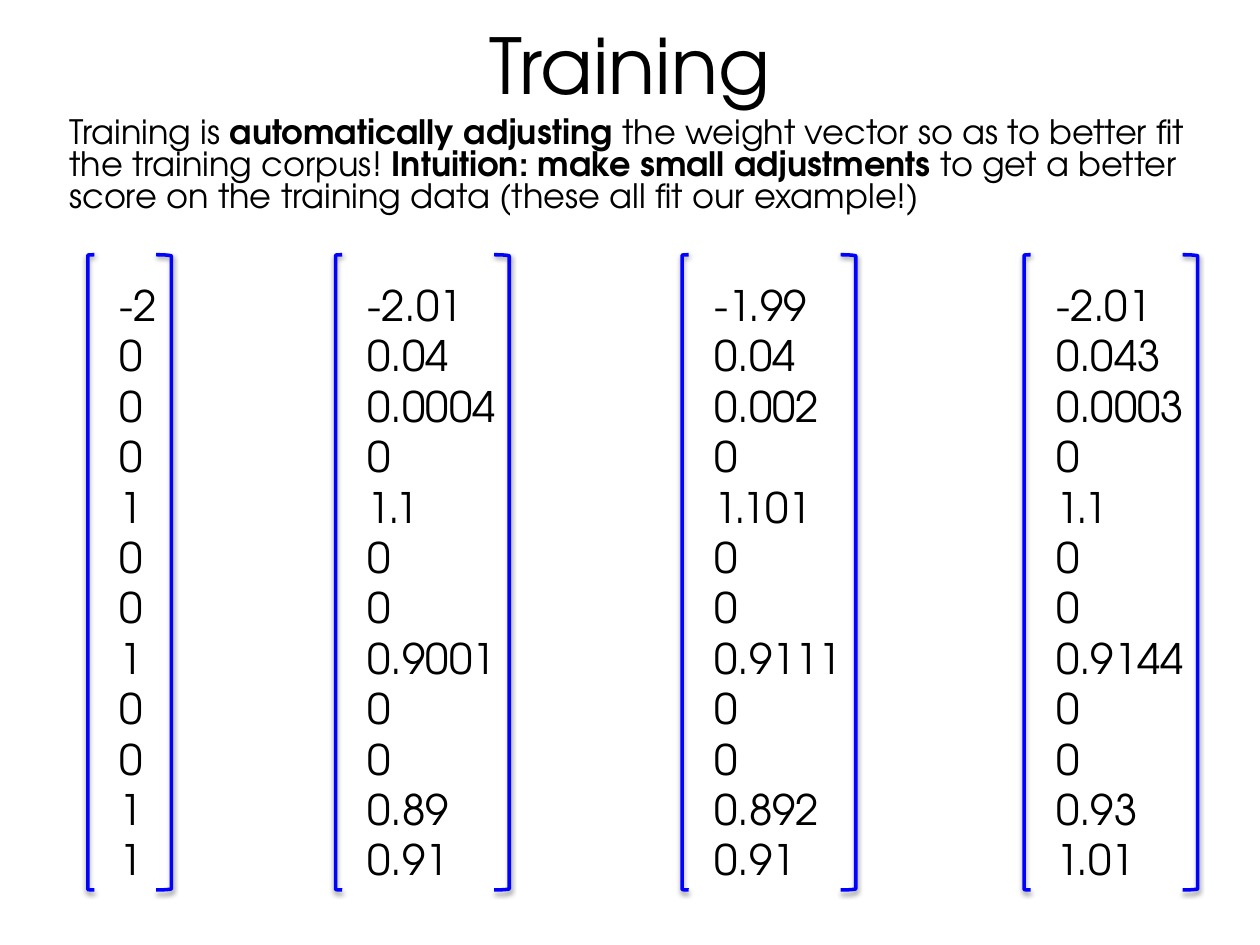
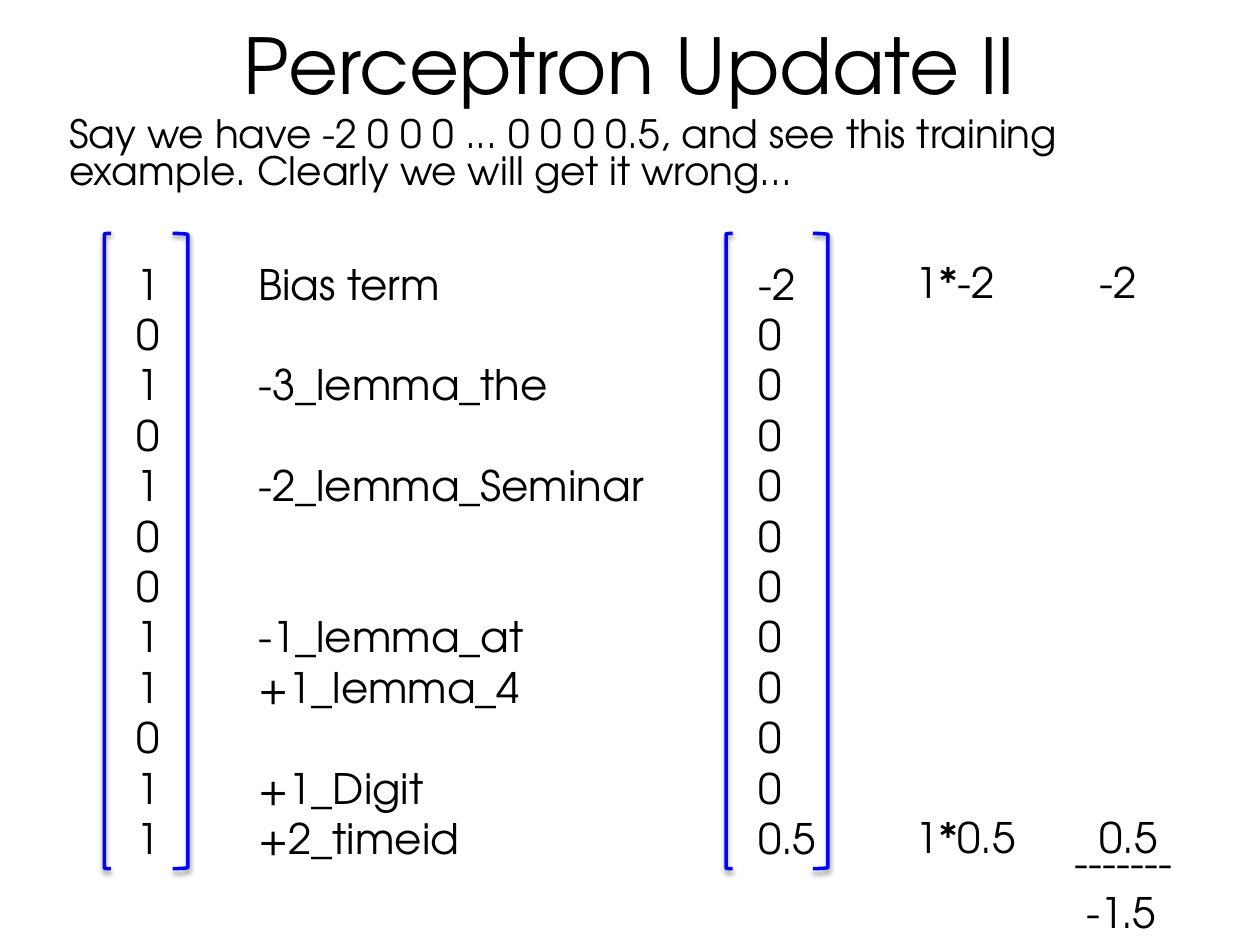
from lxml import etree
from pptx import Presentation
from pptx.dml.color import RGBColor
from pptx.enum.shapes import MSO_SHAPE as Preset
from pptx.enum.text import MSO_ANCHOR as Anchor, MSO_AUTO_SIZE as AutoSize, PP_ALIGN as Align
from pptx.oxml.ns import qn
from pptx.util import Pt

BLACK = RGBColor(0x00, 0x00, 0x00)
BRACKET_BLUE = RGBColor(0x00, 0x01, 0xFF)
FONT = "TeX Gyre Adventor"
INSET = 3.6
ENTRY_SIZE = 24
ROW_PITCH = 28.8
COLUMN_HEIGHT = 355
BRACKET_HEIGHT = 363
LEFT_ARM, RIGHT_ARM = 3.8, 8.64
ENTRY_OFFSET = (14.7, 10.6)


class SlideWriter:
    """Holds the shared style and the slide being filled."""

    def __init__(self, deck):
        self.deck = deck
        self.page = None

    def start(self, heading):
        self.page = self.deck.slides.add_slide(self.deck.slide_layouts[1])
        title = self.page.shapes.title
        self.place(title, 36, 0, 648, 72.7)
        frame = self.frame(title, Anchor.MIDDLE)
        para = frame.paragraphs[0]
        para.alignment = Align.CENTER
        self.span(para, heading, 44)

    def place(self, box, left, top, width, height):
        box.left, box.top, box.width, box.height = map(Pt, (left, top, width, height))

    def frame(self, box, anchor=Anchor.TOP, wrap=True, fit=AutoSize.NONE):
        frame = box.text_frame
        frame.margin_left = frame.margin_right = Pt(INSET)
        frame.margin_top = frame.margin_bottom = Pt(INSET)
        frame.vertical_anchor = anchor
        frame.word_wrap = wrap
        frame.auto_size = fit
        return frame

    def span(self, para, text, size, bold=False):
        span = para.add_run()
        span.text = text
        span.font.name = FONT
        span.font.size = Pt(size)
        span.font.bold = bold
        span.font.color.rgb = BLACK

    def indent(self, para, left):
        props = para._p.get_or_add_pPr()
        props.set("marL", str(Pt(left)))
        props.set("indent", "0")
        return props

    def intro(self, spans, size, height, before):
        """Fill the body placeholder with (text, bold) pairs."""
        body = self.page.placeholders[1]
        self.place(body, 36, 64.1, 648, height)
        para = self.frame(body).paragraphs[0]
        para.line_spacing = 0.8
        para.space_before = Pt(before)
        etree.SubElement(self.indent(para, 0), qn("a:buNone"))
        for text, bold in spans:
            self.span(para, text, size, bold)

    def column(self, left, top, width, entries, wrap=False, indent=0, height=COLUMN_HEIGHT):
        """Write {row: text}; skipped rows become space before the next entry."""
        box = self.page.shapes.add_textbox(Pt(left), Pt(top), Pt(width), Pt(height))
        frame = self.frame(box, wrap=wrap, fit=AutoSize.SHAPE_TO_FIT_TEXT)
        previous = -1
        for row, text in entries.items():
            para = frame.paragraphs[0] if previous < 0 else frame.add_paragraph()
            para.space_before = Pt((row - previous - 1) * ROW_PITCH)
            if indent:
                self.indent(para, indent)
            self.span(para, text, ENTRY_SIZE)
            previous = row

    def bracket(self, preset, left, top, width):
        bracket = self.page.shapes.add_shape(
            preset, Pt(left), Pt(top), Pt(width), Pt(BRACKET_HEIGHT))
        bracket.fill.background()
        bracket.line.color.rgb = BRACKET_BLUE
        bracket.line.width = Pt(2)
        # Soft shadow straight below
        bracket.shadow.inherit = False
        effects = bracket._element.spPr.find(qn("a:effectLst"))
        shadow = etree.SubElement(effects, qn("a:outerShdw"), blurRad=str(Pt(3)),
                                  dist=str(Pt(1.6)), dir="5400000", rotWithShape="0")
        color = etree.SubElement(shadow, qn("a:srgbClr"), val=str(BLACK))
        etree.SubElement(color, qn("a:alpha"), val="38000")

    def vector(self, left, top, width, entry_width, values):
        self.bracket(Preset.LEFT_BRACKET, left, top, LEFT_ARM)
        self.bracket(Preset.RIGHT_BRACKET, left + width - RIGHT_ARM, top, RIGHT_ARM)
        across, down = ENTRY_OFFSET
        self.column(left + across, top + down, entry_width, dict(enumerate(values.split())))


def add_training(writer):
    writer.start("Training")
    writer.intro([
        ("Training is ", False),
        ("automatically adjusting", True),
        (" the weight vector so as to better fit the training corpus! ", False),
        ("Intuition: make small adjustments", True),
        (" to get a better score on the training data (these all fit our example!)", False),
    ], 19.2, 69, 4)

    # Weight vectors: left, width, entry width, values
    weights = [
        (50.2, 47.7, 29.5, "-2 0 0 0 1 0 0 1 0 0 1 1"),
        (191.8, 99.2, 81.4, "-2.01 0.04 0.0004 0 1.1 0 0 0.9001 0 0 0.89 0.91"),
        (389.8, 99.2, 81.4, "-1.99 0.04 0.002 0 1.101 0 0 0.9111 0 0 0.892 0.91"),
        (585.2, 99.2, 81.4, "-2.01 0.043 0.0003 0 1.1 0 0 0.9144 0 0 0.93 1.01"),
    ]
    for left, width, entry_width, values in weights:
        writer.vector(left, 145.6, width, entry_width, values)


def add_perceptron_update(writer):
    writer.start("Perceptron Update II")
    writer.intro([("Say we have -2 0 0 0 ... 0 0 0 0.5, and see this training example. "
                   "Clearly we will get it wrong...", False)], 22.3, 57, 5)

    # Feature vector, feature names, weight vector
    writer.vector(59.6, 133.4, 47.7, 21.6, "1 0 1 0 1 0 0 1 1 0 1 1")
    writer.column(144, 144, 234.7, {
        0: "Bias term", 2: "-3_lemma_the", 4: "-2_lemma_Seminar", 7: "-1_lemma_at",
        8: "+1_lemma_4", 10: "+1_Digit", 11: "+2_timeid"}, wrap=True)
    writer.vector(414.9, 133.4, 58.2, 41.8, "-2 0 0 0 0 0 0 0 0 0 0 0.5")

    # Products and their sum
    writer.column(519.8, 143.3, 64.8, {0: "1*-2", 11: "1*0.5"})
    writer.column(611.3, 143.3, 54.7, {0: "-2", 11: "0.5"}, wrap=True, indent=13.3)
    writer.column(610.6, 474.5, 65.5, {0: "-------"}, wrap=True, height=36)
    writer.column(610.6, 474.5 + ROW_PITCH, 65.5, {0: "-1.5"}, wrap=True,
                  indent=6.65, height=36)


def main():
    deck = Presentation()
    deck.slide_width, deck.slide_height = Pt(720), Pt(540)
    writer = SlideWriter(deck)
    add_training(writer)
    add_perceptron_update(writer)
    deck.save("out.pptx")


if __name__ == "__main__":
    main()
